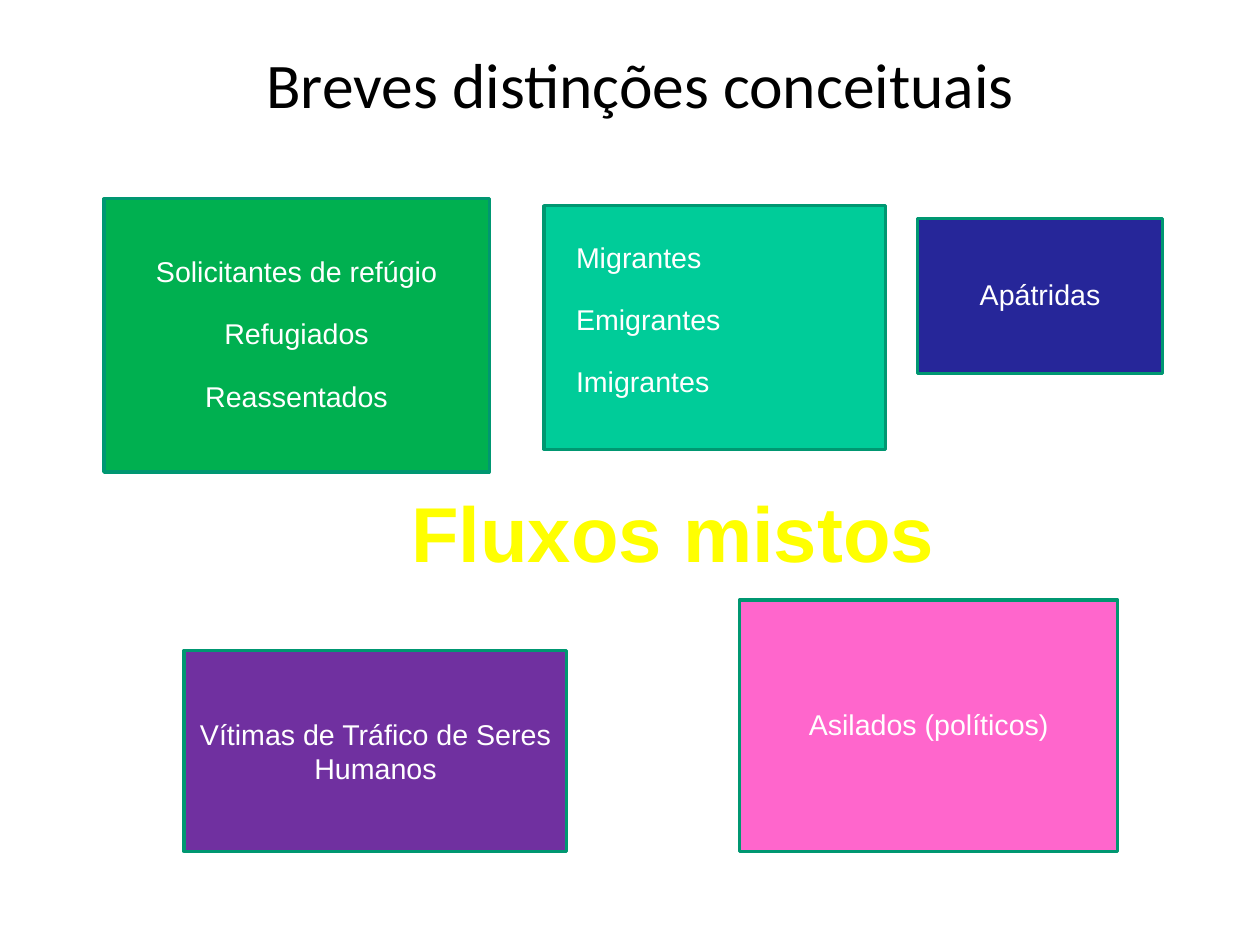
from dataclasses import dataclass

from pptx import Presentation
from pptx.dml.color import RGBColor
from pptx.enum.shapes import MSO_SHAPE as Preset
from pptx.enum.text import MSO_ANCHOR as Anchor, PP_ALIGN as Align
from pptx.util import Inches, Pt


@dataclass(frozen=True)
class Theme:
    heading_font: str = "Calibri"
    body_font: str = "Arial"
    title_size: int = 40
    banner_size: int = 49
    body_size: int = 18
    paragraph_gap: float = 19.8
    outline_width: int = 2
    black: str = "000000"
    white: str = "FFFFFF"
    yellow: str = "FFFF00"
    outline: str = "009771"
    mint: str = "00CC99"
    green: str = "00B050"
    navy: str = "262699"
    purple: str = "7030A0"
    pink: str = "FF66CC"


theme = Theme()


def write_text(shape, lines, size=theme.body_size, font=theme.body_font,
               color=theme.white, bold=False, align=Align.CENTER,
               anchor=Anchor.MIDDLE, line_spacing=0.9):
    frame = shape.text_frame
    frame.word_wrap = True
    frame.vertical_anchor = anchor
    frame.margin_left = frame.margin_right = Inches(0.11)
    frame.margin_top = frame.margin_bottom = Inches(0.06)
    for index, line in enumerate(lines):
        paragraph = frame.add_paragraph() if index else frame.paragraphs[0]
        paragraph.alignment = align
        paragraph.line_spacing = line_spacing
        paragraph.space_before = Pt(theme.paragraph_gap if index else 0)
        run = paragraph.add_run()
        run.text = line
        run.font.size = Pt(size)
        run.font.name = font
        run.font.bold = bold
        run.font.color.rgb = RGBColor.from_string(color)


presentation = Presentation()
presentation.slide_width = Inches(28 / 2.54)
presentation.slide_height = Inches(21 / 2.54)
slide = presentation.slides.add_slide(presentation.slide_layouts[5])

title = slide.shapes.title
title.left, title.top = Inches(0.64), Inches(0.33)
title.width, title.height = Inches(9.92), Inches(1.38)
write_text(title, ["Breves distinções conceituais"], size=theme.title_size,
           font=theme.heading_font, color=theme.black, anchor=Anchor.TOP,
           line_spacing=1.0)

groups = [
    ((4.76, 1.8, 2.99, 2.13), theme.mint, [], 0.9),
    ((0.91, 1.74, 3.37, 2.39), theme.green,
     ["Solicitantes de refúgio", "Refugiados", "Reassentados"], 0.9),
    ((8.03, 1.91, 2.14, 1.36), theme.navy, ["Apátridas"], 0.9),
    ((1.61, 5.69, 3.35, 1.76), theme.purple,
     ["Vítimas de Tráfico de Seres Humanos"], 1.0),
    ((6.47, 5.25, 3.31, 2.2), theme.pink, ["Asilados (políticos)"], 0.9),
]
for bounds, fill, lines, line_spacing in groups:
    box = slide.shapes.add_shape(Preset.RECTANGLE, *map(Inches, bounds))
    box.shadow.inherit = False
    box.fill.solid()
    box.fill.fore_color.rgb = RGBColor.from_string(fill)
    box.line.color.rgb = RGBColor.from_string(theme.outline)
    box.line.width = Pt(theme.outline_width)
    write_text(box, lines, line_spacing=line_spacing)

migrants = slide.shapes.add_textbox(*map(Inches, (4.93, 2.07, 2.03, 1.48)))
write_text(migrants, ["Migrantes", "Emigrantes", "Imigrantes"],
           align=Align.LEFT, anchor=Anchor.TOP)

banner = slide.shapes.add_textbox(*map(Inches, (0.87, 4.34, 10.03, 0.79)))
write_text(banner, ["Fluxos mistos"], size=theme.banner_size,
           color=theme.yellow, bold=True, anchor=Anchor.TOP, line_spacing=0.8)

presentation.save("out.pptx")
